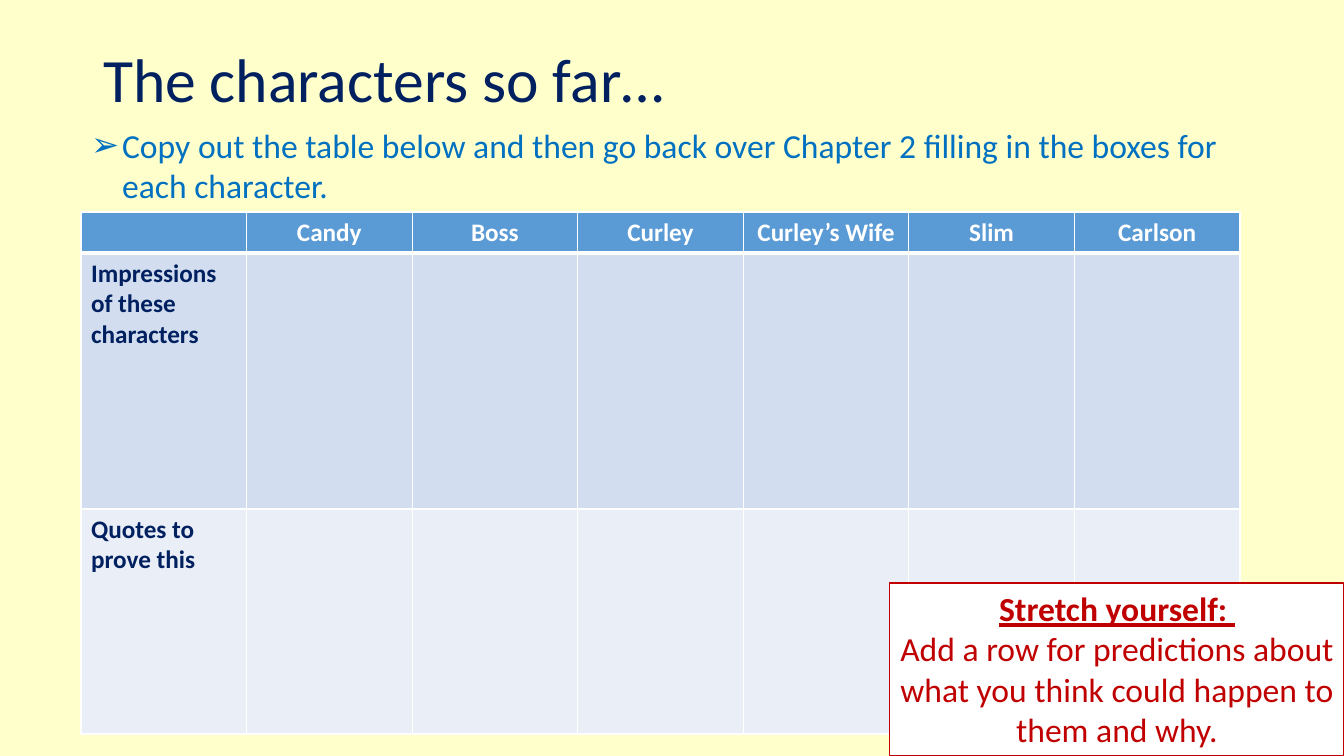
from lxml import etree
from pptx import Presentation
from pptx import util as u
from pptx.dml.color import RGBColor
from pptx.enum import shapes, text
from pptx.oxml.ns import qn

TITLE = "The characters so far…"
TASK = ("Copy out the table below and then go back over Chapter 2 "
        "filling in the boxes for each character.")
CHARACTERS = ["Candy", "Boss", "Curley", "Curley’s Wife", "Slim", "Carlson"]
# row label, height in px, fill
ROWS = [
    ("", 41, "5B9BD5"),
    ("Impressions of these characters", 256, "D2DEEF"),
    ("Quotes to prove this", 225, "EAEFF7"),
]
STRETCH = ["Stretch yourself: ",
           "Add a row for predictions about what you think could happen to them and why."]

# left, top, width, height in px
SLIDE_SIZE = (1344, 756)
TITLE_BOX = (93, 10, 1159, 146)
TASK_BOX = (81, 120, 1200, 92)
TABLE_BOX = (81, 212, 1159, sum(height for _, height, _ in ROWS))
STRETCH_BOX = (890, 583, 454, 173)
BULLET_INDENT = 31

NAVY, BLUE, RED, WHITE, CREAM = "002060", "0070C0", "C00000", "FFFFFF", "FFFFCC"
LEFT, CENTRE = text.PP_ALIGN.LEFT, text.PP_ALIGN.CENTER


def px(length):
    return u.Emu(round(length * 914400 / 100.8))


def colour(hex_value):
    return RGBColor.from_string(hex_value)


def place(shape, box):
    shape.left, shape.top, shape.width, shape.height = map(px, box)


def write(paragraph, words, hex_value, align=LEFT, spacing=1.0, **font):
    layout = {"alignment": align, "line_spacing": spacing, "space_before": u.Pt(0)}
    for name, value in layout.items():
        setattr(paragraph, name, value)
    run = paragraph.add_run()
    run.text = words
    for name, value in {"name": "Calibri", **font}.items():
        setattr(run.font, name, value)
    run.font.color.rgb = colour(hex_value)


def add_bullet(paragraph, symbol, indent):
    properties = paragraph._p.get_or_add_pPr()
    properties.set("marL", str(px(indent)))
    properties.set("indent", str(-px(indent)))
    etree.SubElement(properties, qn("a:buFont")).set("typeface", "Arial")
    etree.SubElement(properties, qn("a:buChar")).set("char", symbol)


def add_borders(cell, widths):
    """Draw white borders, with widths in points for left, right, top, bottom."""
    properties = cell._tc.get_or_add_tcPr()
    for position, (side, width) in enumerate(zip("LRTB", widths)):
        line = etree.Element(qn(f"a:ln{side}"), w=str(u.Pt(width)))
        fill = etree.SubElement(line, qn("a:solidFill"))
        etree.SubElement(fill, qn("a:srgbClr")).set("val", WHITE)
        properties.insert(position, line)


def add_character_table(slide):
    columns = len(CHARACTERS) + 1
    table = slide.shapes.add_table(len(ROWS), columns, *map(px, TABLE_BOX)).table
    for column in table.columns:
        column.width = px(TABLE_BOX[2] / columns)
    for r, (label, height, fill) in enumerate(ROWS):
        table.rows[r].height = px(height)
        borders = (1, 1, 3 if r == 1 else 1, 3 if r == 0 else 1)
        for c in range(columns):
            cell = table.cell(r, c)
            cell.fill.solid()
            cell.fill.fore_color.rgb = colour(fill)
            add_borders(cell, borders)
            words = label if c == 0 else CHARACTERS[c - 1] if r == 0 else ""
            if words:
                write(cell.text_frame.paragraphs[0], words, NAVY if r else WHITE,
                      LEFT if r else CENTRE, size=u.Pt(18), bold=True)


def add_stretch_box(slide):
    box = slide.shapes.add_shape(shapes.MSO_SHAPE.RECTANGLE, *map(px, STRETCH_BOX))
    box.shadow.inherit = False
    box.fill.solid()
    box.fill.fore_color.rgb = colour(WHITE)
    box.line.color.rgb = colour(RED)
    box.line.width = u.Pt(0.75)
    frame = box.text_frame
    frame.word_wrap = True
    frame.vertical_anchor = text.MSO_ANCHOR.TOP
    heading, challenge = frame.paragraphs[0], frame.add_paragraph()
    write(heading, STRETCH[0], RED, CENTRE, size=u.Pt(24), bold=True, underline=True)
    write(challenge, STRETCH[1], RED, CENTRE, size=u.Pt(24))


def main():
    deck = Presentation()
    deck.slide_width, deck.slide_height = map(px, SLIDE_SIZE)
    slide = deck.slides.add_slide(deck.slide_layouts[1])
    slide.background.fill.solid()
    slide.background.fill.fore_color.rgb = colour(CREAM)

    title, task = slide.placeholders
    for part, box, anchor in ((title, TITLE_BOX, text.MSO_ANCHOR.MIDDLE),
                              (task, TASK_BOX, text.MSO_ANCHOR.TOP)):
        place(part, box)
        part.text_frame.auto_size = text.MSO_AUTO_SIZE.NONE
        part.text_frame.vertical_anchor = anchor
    write(title.text_frame.paragraphs[0], TITLE, NAVY, spacing=0.9, size=u.Pt(44))
    instruction = task.text_frame.paragraphs[0]
    write(instruction, TASK, BLUE, size=u.Pt(24))
    add_bullet(instruction, "➢", BULLET_INDENT)

    add_character_table(slide)
    add_stretch_box(slide)
    deck.save("out.pptx")


if __name__ == "__main__":
    main()
